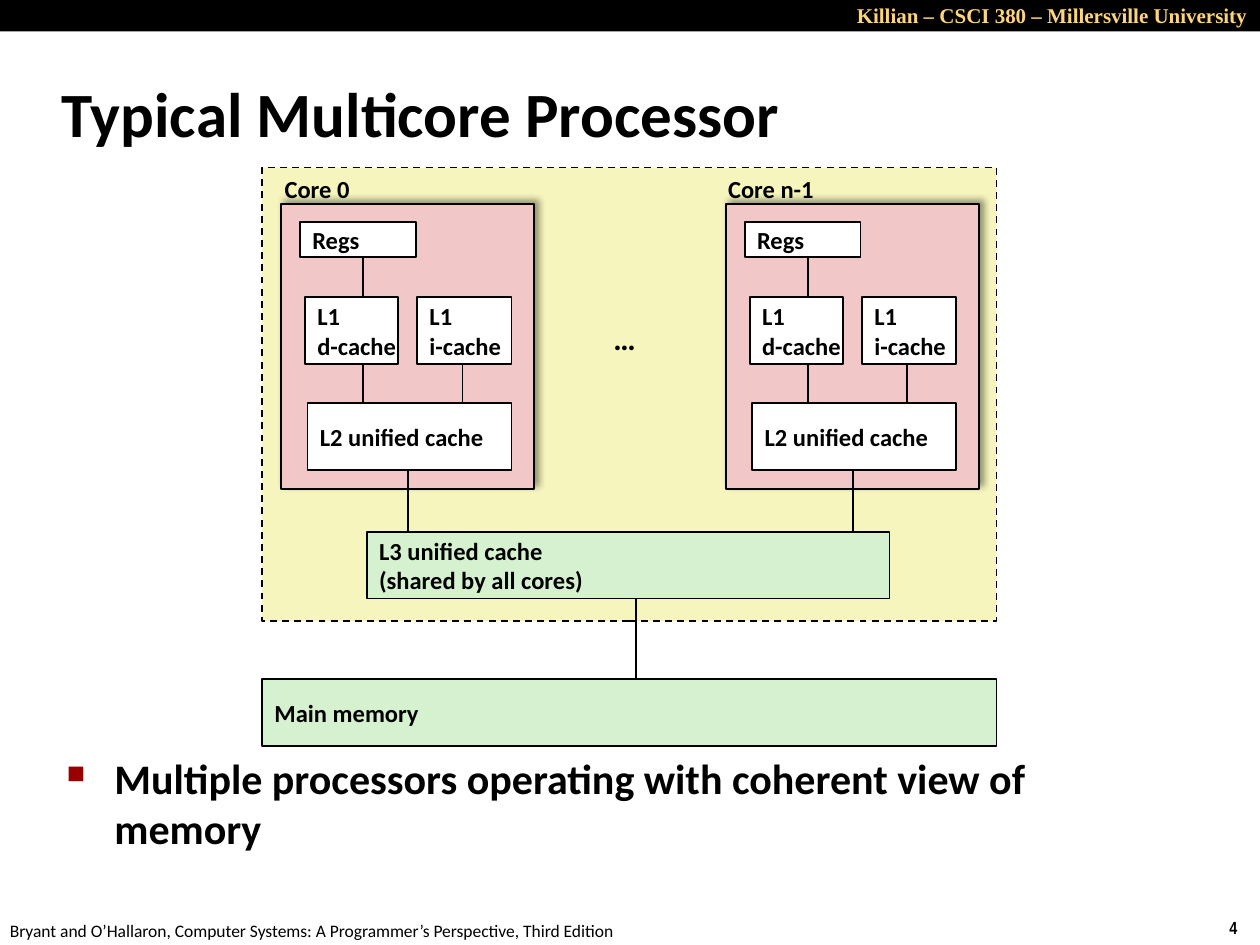
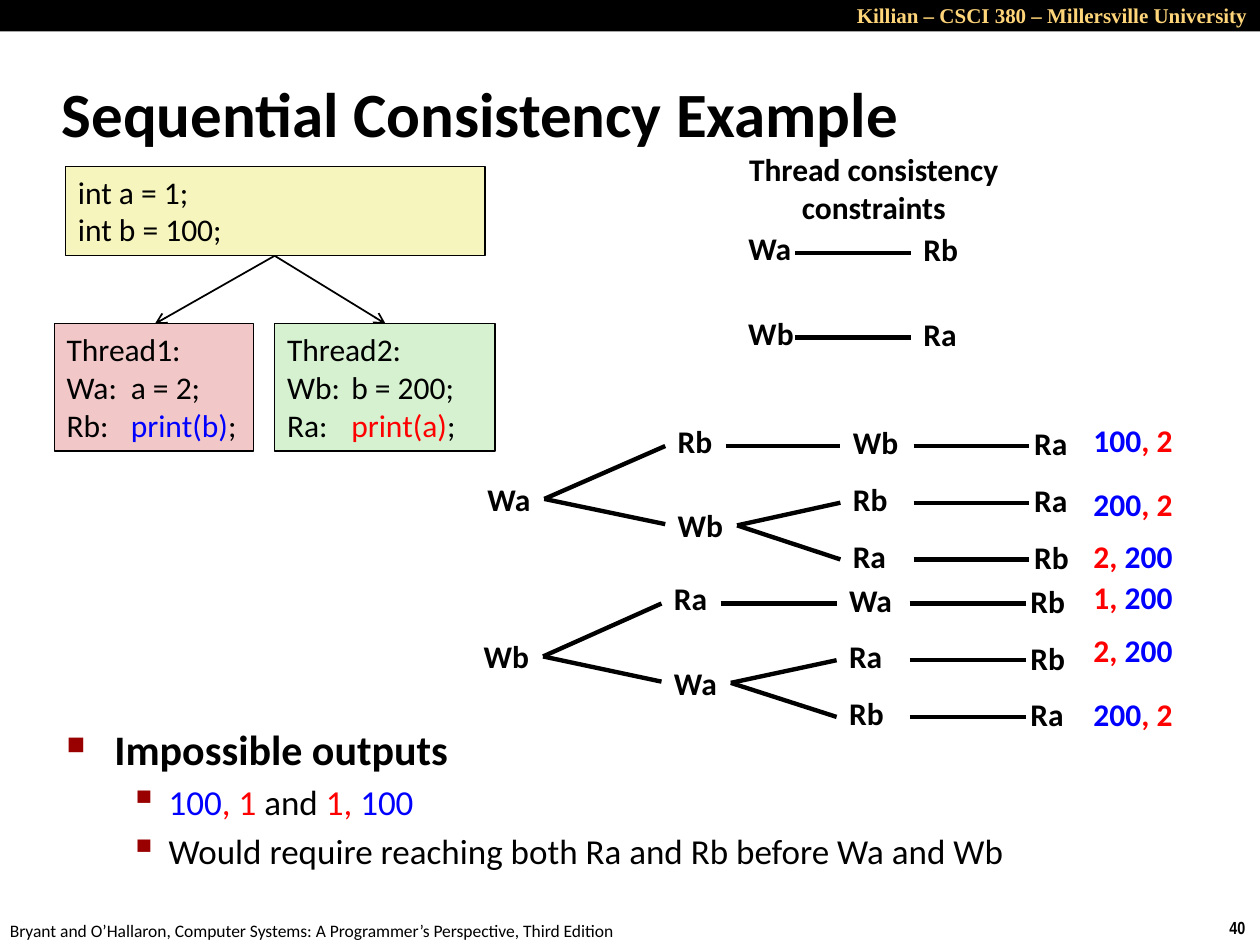
from dataclasses import dataclass

from lxml.etree import SubElement
from pptx import Presentation
from pptx.dml.color import RGBColor
from pptx.enum.dml import MSO_LINE
from pptx.enum.shapes import MSO_CONNECTOR, MSO_SHAPE
from pptx.enum.text import MSO_ANCHOR, MSO_AUTO_SIZE, PP_ALIGN
from pptx.oxml.ns import qn
from pptx.util import Inches, Pt


@dataclass(frozen=True)
class Theme:
    black: str = "000000"
    white: str = "FFFFFF"
    gold: str = "FFD579"
    yellow: str = "F6F5BD"
    pink: str = "F1C7C7"
    green: str = "D5F1CF"
    blue: str = "0000FF"
    red: str = "FF0000"
    bullet: str = "990000"
    font: str = "Calibri"
    header_font: str = "Times New Roman"
    number_font: str = "Arial Narrow"
    title_size: int = 36
    body_size: int = 24
    detail_size: int = 20
    label_size: int = 18
    box_size: int = 14
    header_size: int = 12
    footer_size: int = 10


THEME = Theme()
HEADER = "Killian – CSCI 380 – Millersville University"
FOOTER = "Bryant and O’Hallaron, Computer Systems: A Programmer’s Perspective, Third Edition"
LABEL_WIDTHS = {"Wa": 0.55, "Wb": 0.57, "Ra": 0.47, "Rb": 0.48}
SWAP_VARIABLES = str.maketrans("ab", "ba")


def write_text(paragraph, text, size=THEME.label_size, font=THEME.font, color=THEME.black,
               bold=False, align=PP_ALIGN.LEFT, tab=None):
    paragraph.alignment = align
    runs = [(text, color)] if isinstance(text, str) else text
    for run_text, run_color in runs:
        run = paragraph.add_run()
        run.text = run_text
        run.font.size = Pt(size)
        run.font.name = font
        run.font.bold = bold
        run.font.color.rgb = RGBColor.from_string(run_color)
    if tab:
        tab_list = SubElement(paragraph._p.get_or_add_pPr(), qn("a:tabLst"))
        SubElement(tab_list, qn("a:tab"), pos=str(Inches(tab)), algn="l")


class SlideBuilder:
    def __init__(self, presentation, theme):
        self.presentation = presentation
        self.theme = theme
        self.slide = None

    def start_slide(self, title, number):
        theme = self.theme
        self.slide = self.presentation.slides.add_slide(self.presentation.slide_layouts[5])
        self.text(9.66, 7.23, 0.34, 0.27, [number], size=theme.footer_size,
                  font=theme.number_font, bold=True)
        self.text(-0.02, 7.25, 5.08, 0.27, [FOOTER], size=theme.footer_size)
        self.box(0, 0, 10, 0.25, theme.black, line_width=None)
        self.text(4.5, -0.03, 5.5, 0.3, [HEADER], wrap=True, size=theme.header_size,
                  font=theme.header_font, color=theme.gold, bold=True, align=PP_ALIGN.RIGHT)
        placeholder = self.slide.shapes.title
        placeholder.left, placeholder.top = Inches(0.39), Inches(0.48)
        placeholder.width, placeholder.height = Inches(8.3), Inches(0.83)
        self.fill_frame(placeholder, [title], wrap=True, anchor=MSO_ANCHOR.MIDDLE,
                        size=theme.title_size, bold=True)

    def fill_frame(self, shape, lines, wrap=True, anchor=MSO_ANCHOR.TOP,
                   auto_size=MSO_AUTO_SIZE.NONE, **text_format):
        frame = shape.text_frame
        frame.word_wrap = wrap
        frame.auto_size = auto_size
        frame.vertical_anchor = anchor
        for index, line in enumerate(lines):
            paragraph = frame.add_paragraph() if index else frame.paragraphs[0]
            write_text(paragraph, line, **text_format)

    def text(self, left, top, width, height, lines, wrap=False, **text_format):
        shape = self.slide.shapes.add_textbox(
            Inches(left), Inches(top), Inches(width), Inches(height))
        self.fill_frame(shape, lines, wrap, auto_size=MSO_AUTO_SIZE.SHAPE_TO_FIT_TEXT,
                        **text_format)

    def label(self, left, top, name):
        width = LABEL_WIDTHS[name]
        self.text(left, top, width, 0.4, [name], bold=True)
        return left + width

    def box(self, left, top, width, height, fill, lines=(), line_width=1, dashed=False,
            shadow=False, **frame_format):
        shape = self.slide.shapes.add_shape(
            MSO_SHAPE.RECTANGLE, Inches(left), Inches(top), Inches(width), Inches(height))
        shape.fill.solid()
        shape.fill.fore_color.rgb = RGBColor.from_string(fill)
        if line_width:
            shape.line.color.rgb = RGBColor.from_string(self.theme.black)
            shape.line.width = Pt(line_width)
        else:
            shape.line.fill.background()
        if dashed:
            shape.line.dash_style = MSO_LINE.DASH
        shape.shadow.inherit = False
        if shadow:
            self.cast_shadow(shape)
        if lines:
            self.fill_frame(shape, lines, **frame_format)

    def cast_shadow(self, shape):
        effects = shape._element.spPr.find(qn("a:effectLst"))
        outer = SubElement(effects, qn("a:outerShdw"), blurRad=str(Pt(4)), dist=str(Pt(3)),
                           dir=str(315 * 60000), algn="bl", rotWithShape="0")
        color = SubElement(outer, qn("a:srgbClr"), val=self.theme.black)
        SubElement(color, qn("a:alpha"), val="40000")

    def hardware(self, left, top, width, height, fill, *lines, wrap=True):
        self.box(left, top, width, height, fill, lines, wrap=wrap, anchor=MSO_ANCHOR.MIDDLE,
                 size=self.theme.box_size, bold=True)

    def line(self, start, end, width=1.0, arrow=False):
        connector = self.slide.shapes.add_connector(
            MSO_CONNECTOR.STRAIGHT, *(Inches(value) for value in (*start, *end)))
        connector.line.color.rgb = RGBColor.from_string(self.theme.black)
        connector.line.width = Pt(width)
        if arrow:
            SubElement(connector.line._get_or_add_ln(), qn("a:tailEnd"), type="arrow")
        SubElement(connector._element.spPr, qn("a:effectLst"))

    def edge(self, start, end):
        self.line(start, end, width=2.5)

    def bullets(self, top, height, items):
        theme = self.theme
        levels = [(theme.body_size, True, 0.38, 0.38, "■", 60),
                  (theme.detail_size, False, 0.81, 0.31, "▪", 110)]
        shape = self.slide.shapes.add_textbox(
            Inches(0.43), Inches(top), Inches(8.64), Inches(height))
        frame = shape.text_frame
        frame.word_wrap = True
        for index, (level, text) in enumerate(items):
            size, bold, margin, hanging, symbol, percent = levels[level]
            paragraph = frame.add_paragraph() if index else frame.paragraphs[0]
            write_text(paragraph, text, size=size, bold=bold)
            paragraph.level = level
            paragraph.space_before = Pt(size * 0.2)
            properties = paragraph._p.get_or_add_pPr()
            properties.set("marL", str(Inches(margin)))
            properties.set("indent", str(-Inches(hanging)))
            color = SubElement(properties, qn("a:buClr"))
            SubElement(color, qn("a:srgbClr"), val=theme.bullet)
            SubElement(properties, qn("a:buSzPct"), val=str(percent * 1000))
            SubElement(properties, qn("a:buChar"), char=symbol)


def draw_core(builder, left, name, name_left, name_width):
    theme = builder.theme
    builder.box(left, 1.62, 2.01, 2.26, theme.pink, shadow=True)
    builder.hardware(left + 0.15, 1.76, 0.92, 0.28, theme.white, "Regs", wrap=False)
    builder.hardware(left + 0.19, 2.36, 0.74, 0.53, theme.white, "L1", "d-cache", wrap=False)
    builder.hardware(left + 1.08, 2.36, 0.75, 0.53, theme.white, "L1", "i-cache", wrap=False)
    builder.hardware(left + 0.21, 3.2, 1.62, 0.53, theme.white, "L2 unified cache")
    for offset, top, bottom in [(0.65, 2.04, 2.36), (0.65, 2.89, 3.2),
                                (1.44, 2.89, 3.2), (1.01, 3.73, 4.22)]:
        builder.line((left + offset, top), (left + offset, bottom))
    builder.text(name_left, 1.33, name_width, 0.34, [name], size=theme.box_size, bold=True)


def build_processor_slide(builder):
    theme = builder.theme
    builder.start_slide("Typical Multicore Processor", "4")
    builder.bullets(5.92, 1.01,
                    [(0, "Multiple processors operating with coherent view of memory")])
    builder.box(2.08, 1.33, 5.83, 3.6, theme.yellow, dashed=True)
    draw_core(builder, 2.23, "Core 0", 2.16, 0.72)
    draw_core(builder, 5.76, "Core n-1", 5.68, 0.89)
    builder.text(4.77, 2.48, 0.38, 0.4, ["…"], bold=True)
    builder.hardware(2.91, 4.22, 4.15, 0.53, theme.green,
                     "L3 unified cache", "(shared by all cores)")
    builder.hardware(2.08, 5.39, 5.83, 0.53, theme.green, "Main memory")
    builder.line((5.05, 4.75), (5.05, 5.39))


def draw_interleavings(builder, left, top, swapped=False):
    def place(column, row, name):
        name = name.translate(SWAP_VARIABLES) if swapped else name
        return builder.label(left + column, top + row, name)

    root_right = place(0, 0.46, "Wa")
    upper_right = place(1.51, 0, "Rb")
    lower_right = place(1.51, 0.67, "Wb")
    rows = [top + 0.24 + 0.45 * index for index in range(3)]
    for index, (third, fourth) in enumerate([("Wb", "Ra"), ("Rb", "Ra"), ("Ra", "Rb")]):
        place(2.9, 0.01 + 0.45 * index, third)
        place(4.34, 0.02 + 0.45 * index, fourth)
        builder.edge((left + 3.48, rows[index]), (left + 4.4, rows[index]))
    for end_row in (rows[0], top + 0.86):
        builder.edge((root_right, top + 0.66), (left + 1.51, end_row))
    builder.edge((upper_right, rows[0]), (left + 2.9, rows[0]))
    for end_row in rows[1:]:
        builder.edge((lower_right, top + 0.87), (left + 2.9, end_row))


def draw_program(builder):
    theme = builder.theme
    builder.box(0.52, 1.32, 3.33, 0.71, theme.yellow, ["int a = 1;", "int b = 100;"],
                line_width=0.75)
    threads = [
        (0.43, 1.58, theme.pink, "Thread1:", "Wa:\ta = 2;", "Rb:\t", "print(b)", theme.blue, 1.23),
        (2.18, 1.75, theme.green, "Thread2:", "Wb:\tb = 200;", "Ra:\t", "print(a)", theme.red, 3.06),
    ]
    for left, width, fill, name, write, read, call, color, arrow_end in threads:
        read_runs = [(read, theme.black), (call, color), (";", theme.black)]
        builder.box(left, 2.57, width, 1.01, fill, [name, write, read_runs],
                    line_width=0.75, tab=0.51)
        builder.line((2.18, 2.03), (arrow_end, 2.57), arrow=True)


def build_consistency_slide(builder):
    theme = builder.theme
    builder.start_slide("Sequential Consistency Example", "40")
    builder.bullets(5.69, 0.84, [
        (0, "Impossible outputs"),
        (1, [("100", theme.blue), (", 1 ", theme.red), ("and ", theme.black),
             ("1, ", theme.red), ("100", theme.blue)]),
        (1, "Would require reaching both Ra and Rb before Wa and Wb"),
    ])
    draw_interleavings(builder, 3.77, 3.3)
    draw_interleavings(builder, 3.74, 4.55, swapped=True)
    blue_first = {value: [(value, theme.blue), (", 2", theme.red)] for value in ("100", "200")}
    red_first = {value: [(value + ", ", theme.red), ("200", theme.blue)] for value in ("1", "2")}
    outputs = [(3.29, blue_first["100"]), (3.8, blue_first["200"]), (4.21, red_first["2"]),
               (4.54, red_first["1"]), (4.96, red_first["2"]), (5.47, blue_first["200"])]
    for top, output in outputs:
        builder.text(8.58, top, 0.84, 0.4, [output], bold=True)
    for top, first, second in [(1.77, "Wa", "Rb"), (2.44, "Wb", "Ra")]:
        builder.label(5.84, top, first)
        builder.label(7.23, top + 0.01, second)
        builder.edge((6.31, top + 0.24), (7.23, top + 0.24))
    builder.text(5.84, 1.14, 2.19, 0.71, ["Thread consistency", "constraints"],
                 bold=True, align=PP_ALIGN.CENTER)
    draw_program(builder)


def main():
    presentation = Presentation()
    presentation.slide_width = Inches(10)
    presentation.slide_height = Inches(7.5)
    builder = SlideBuilder(presentation, THEME)
    build_processor_slide(builder)
    build_consistency_slide(builder)
    presentation.save("out.pptx")


if __name__ == "__main__":
    main()
